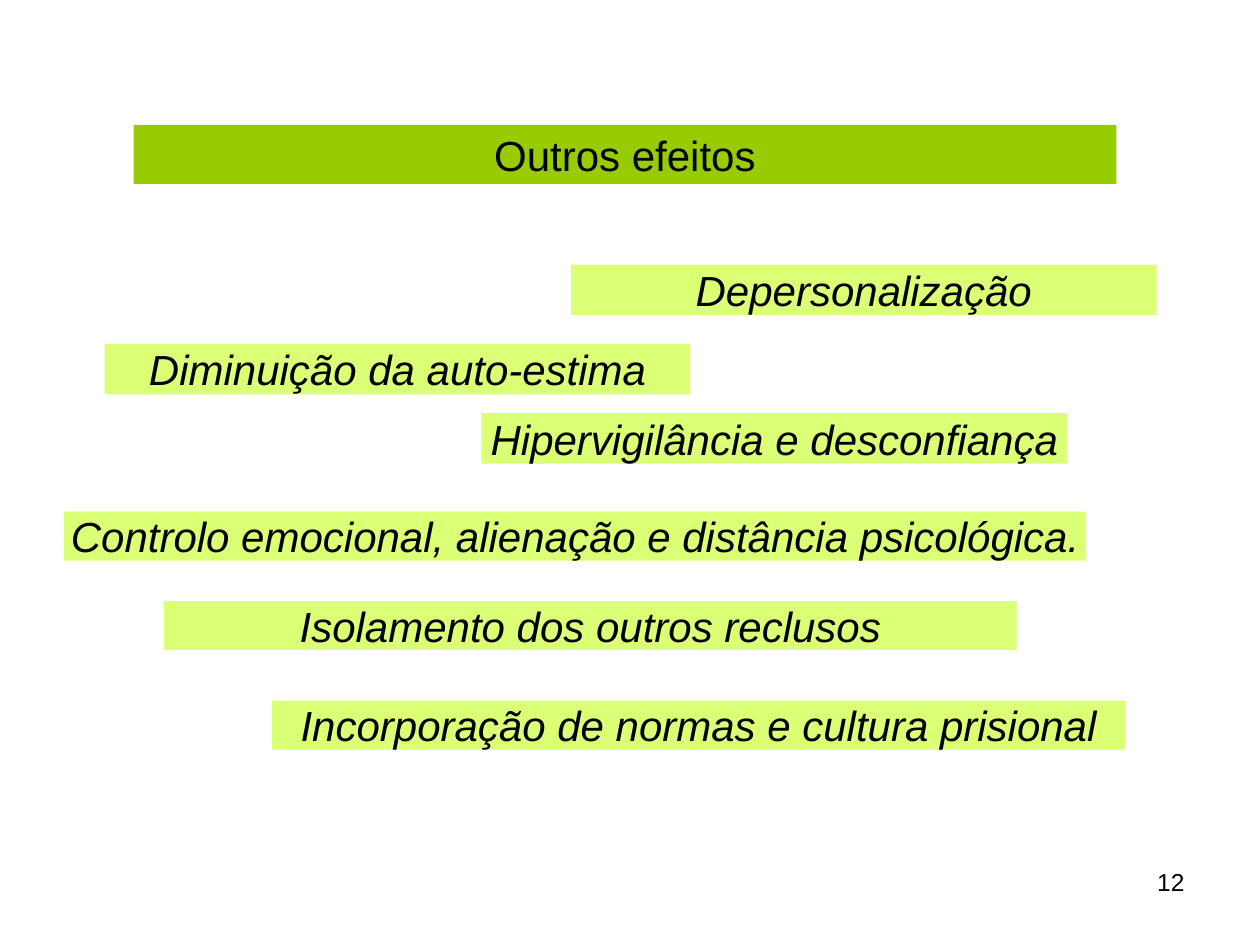
from dataclasses import dataclass

from pptx import Presentation
from pptx.dml.color import RGBColor
from pptx.enum.shapes import MSO_SHAPE
from pptx.enum.text import MSO_ANCHOR, MSO_AUTO_SIZE, PP_ALIGN
from pptx.util import Inches, Pt


@dataclass(frozen=True)
class Theme:
    font: str = "Arial"
    text: RGBColor = RGBColor(0x00, 0x00, 0x00)
    title_fill: RGBColor = RGBColor(0x99, 0xCC, 0x00)
    effect_fill: RGBColor = RGBColor(0xDB, 0xFF, 0x75)
    body_size: Pt = Pt(24)
    number_size: Pt = Pt(14)


THEME = Theme()

# text, left, top, width, height
EFFECTS = [
    ("Hipervigilância e desconfiança", 3.82, 3.28, 4.65, 0.4),
    ("Controlo emocional, alienação e distância psicológica.", 0.51, 4.06, 8.11, 0.39),
    ("Isolamento dos outros reclusos", 1.3, 4.77, 6.77, 0.39),
    ("Incorporação de normas e cultura prisional", 2.16, 5.56, 6.77, 0.39),
    ("Depersonalização", 4.53, 2.1, 4.65, 0.4),
    ("Diminuição da auto-estima", 0.83, 2.73, 4.65, 0.4),
]


def set_attributes(target, values):
    for name, value in values.items():
        setattr(target, name, value)


def write_text(box, text, size=THEME.body_size, align=PP_ALIGN.CENTER,
               anchor=MSO_ANCHOR.MIDDLE, wrap=False, italic=False):
    frame = box.text_frame
    set_attributes(frame, {"auto_size": MSO_AUTO_SIZE.NONE,
                           "vertical_anchor": anchor, "word_wrap": wrap})
    para = frame.paragraphs[0]
    para.alignment = align
    span = para.add_run()
    span.text = text
    set_attributes(span.font, {"name": THEME.font, "size": size, "italic": italic})
    span.font.color.rgb = THEME.text


def fill_box(box, color):
    box.fill.solid()
    box.fill.fore_color.rgb = color
    box.line.fill.background()


def add_title(page, text):
    title = page.shapes.title
    set_attributes(title, {"left": Inches(1.06), "top": Inches(0.99),
                           "width": Inches(7.8), "height": Inches(0.47)})
    fill_box(title, THEME.title_fill)
    write_text(title, text)


def add_effect(page, text, *bounds):
    box = page.shapes.add_shape(MSO_SHAPE.RECTANGLE, *map(Inches, bounds))
    box.shadow.inherit = False
    fill_box(box, THEME.effect_fill)
    write_text(box, text, italic=True)


def add_page_number(page, number):
    box = page.shapes.add_textbox(Inches(7.17), Inches(6.83), Inches(2.33), Inches(0.52))
    write_text(box, number, size=THEME.number_size, align=PP_ALIGN.RIGHT,
               anchor=MSO_ANCHOR.TOP, wrap=True)


def main():
    deck = Presentation()
    set_attributes(deck, {"slide_width": Inches(10), "slide_height": Inches(7.5)})
    title_only = deck.slide_layouts.get_by_name("Title Only")
    page = deck.slides.add_slide(title_only)
    add_title(page, "Outros efeitos")
    add_page_number(page, "12")
    for effect in EFFECTS:
        add_effect(page, *effect)
    deck.save("out.pptx")


if __name__ == "__main__":
    main()
